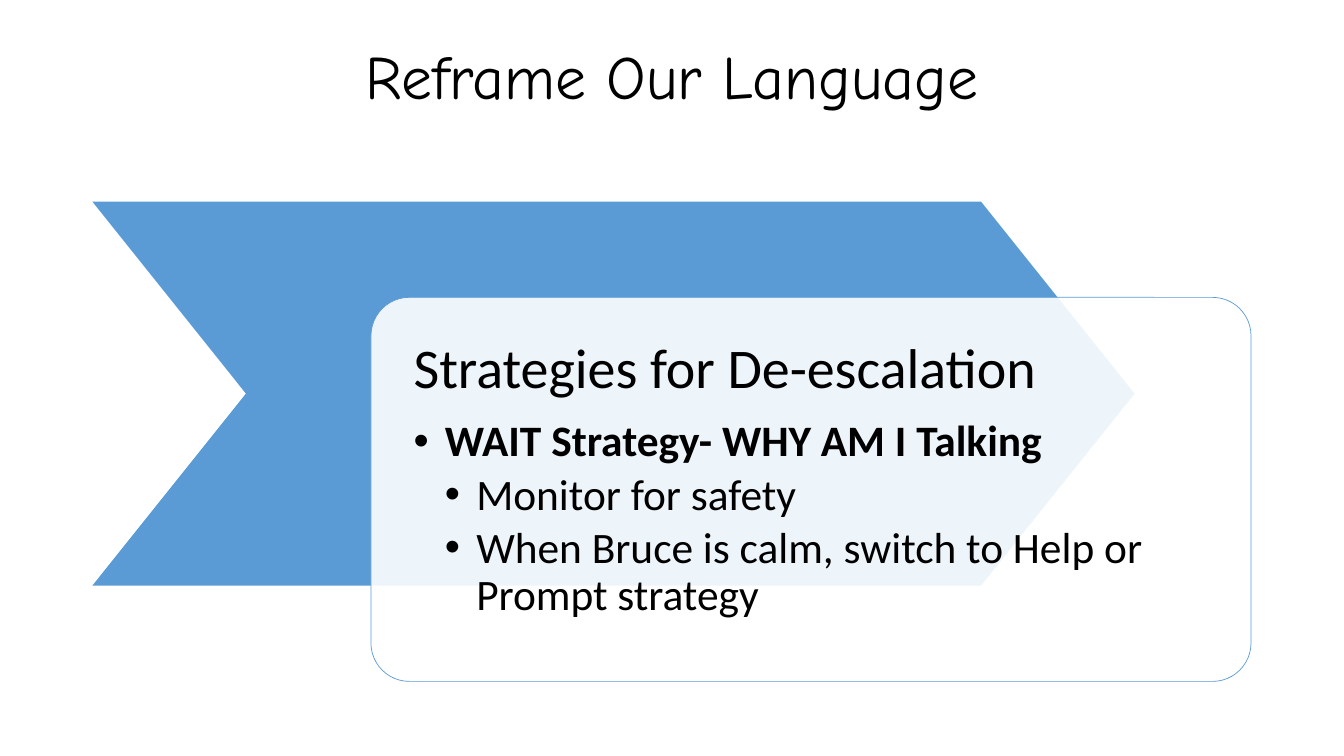
from lxml import etree
from pptx import Presentation
from pptx.dml.color import RGBColor
from pptx.enum.shapes import MSO_SHAPE
from pptx.enum.text import MSO_ANCHOR, PP_ALIGN
from pptx.oxml.ns import qn
from pptx.util import Pt

CHEVRON = MSO_SHAPE.CHEVRON
ROUNDED = MSO_SHAPE.ROUNDED_RECTANGLE
TOP, MIDDLE = MSO_ANCHOR.TOP, MSO_ANCHOR.MIDDLE
LEFT, CENTER = PP_ALIGN.LEFT, PP_ALIGN.CENTER

COLORS = {"text": "000000", "arrow": "5B9BD5", "card": "FFFFFF"}
BODY_FONT, TITLE_FONT = "Calibri", "Comic Neue"
INDENT = 22.4


class SlideBuilder:
    def __init__(self, slide):
        self.slide = slide

    def color(self, name):
        return RGBColor.from_string(COLORS[name])

    def shape(self, kind, box, adjustment, fill, opacity=100, line=None):
        shape = self.slide.shapes.add_shape(kind, *map(Pt, box))
        shape.shadow.inherit = False
        shape.adjustments[0] = adjustment
        shape.fill.solid()
        shape.fill.fore_color.rgb = self.color(fill)
        if opacity < 100:
            srgb = shape.fill._xPr.find(qn("a:solidFill"))[0]
            etree.SubElement(srgb, qn("a:alpha"), val=str(opacity * 1000))
        if line:
            shape.line.color.rgb = self.color(line)
            shape.line.width = Pt(0.5)
        else:
            shape.line.fill.background()

    def text_frame(self, box, anchor, inset_x, inset_y):
        frame = self.slide.shapes.add_textbox(*map(Pt, box)).text_frame
        frame.word_wrap = True
        frame.vertical_anchor = anchor
        frame.margin_left = frame.margin_right = Pt(inset_x)
        frame.margin_top = frame.margin_bottom = Pt(inset_y)
        return frame

    def paragraph(self, paragraph, text, size, font=BODY_FONT, align=LEFT,
                  bold=False, level=0, after=0):
        """Fill a paragraph; level 1 and deeper get a bullet."""
        paragraph.text = text
        paragraph.alignment = align
        paragraph.level = level
        paragraph.line_spacing = 0.9
        paragraph.space_after = Pt(after)
        if level:
            properties = paragraph._p.get_or_add_pPr()
            properties.set("marL", str(Pt(INDENT * level)))
            properties.set("indent", str(-Pt(INDENT)))
            etree.SubElement(properties, qn("a:buFont"), typeface="Arial")
            etree.SubElement(properties, qn("a:buChar"), char="•")
        paragraph.font.name = font
        paragraph.font.size = Pt(size)
        paragraph.font.bold = bold
        paragraph.font.color.rgb = self.color("text")


def main():
    deck = Presentation()
    deck.slide_width, deck.slide_height = Pt(960), Pt(540)
    builder = SlideBuilder(deck.slides.add_slide(deck.slide_layouts[6]))

    title = builder.text_frame((66, 13, 828, 87), MIDDLE, 7.2, 3.6)
    builder.paragraph(title.paragraphs[0], "Reframe Our Language", 44,
                      font=TITLE_FONT, align=CENTER)

    builder.shape(CHEVRON, (66, 144, 744.5, 274.3), 0.4, "arrow")
    builder.shape(ROUNDED, (265, 212.4, 628.6, 274.3), 0.1, "card",
                  opacity=90, line="arrow")

    strategies = builder.text_frame((273, 220.4, 612.6, 258), TOP, INDENT, INDENT)
    builder.paragraph(strategies.paragraphs[0], "Strategies for De-escalation",
                      40, after=13.5)
    for level, text in (
        (1, "WAIT Strategy- WHY AM I Talking"),
        (2, "Monitor for safety"),
        (2, "When Bruce is calm, switch to Help or Prompt strategy"),
    ):
        builder.paragraph(strategies.add_paragraph(), text, 31,
                          bold=level == 1, level=level, after=4.6)

    deck.save("out.pptx")


if __name__ == "__main__":
    main()
